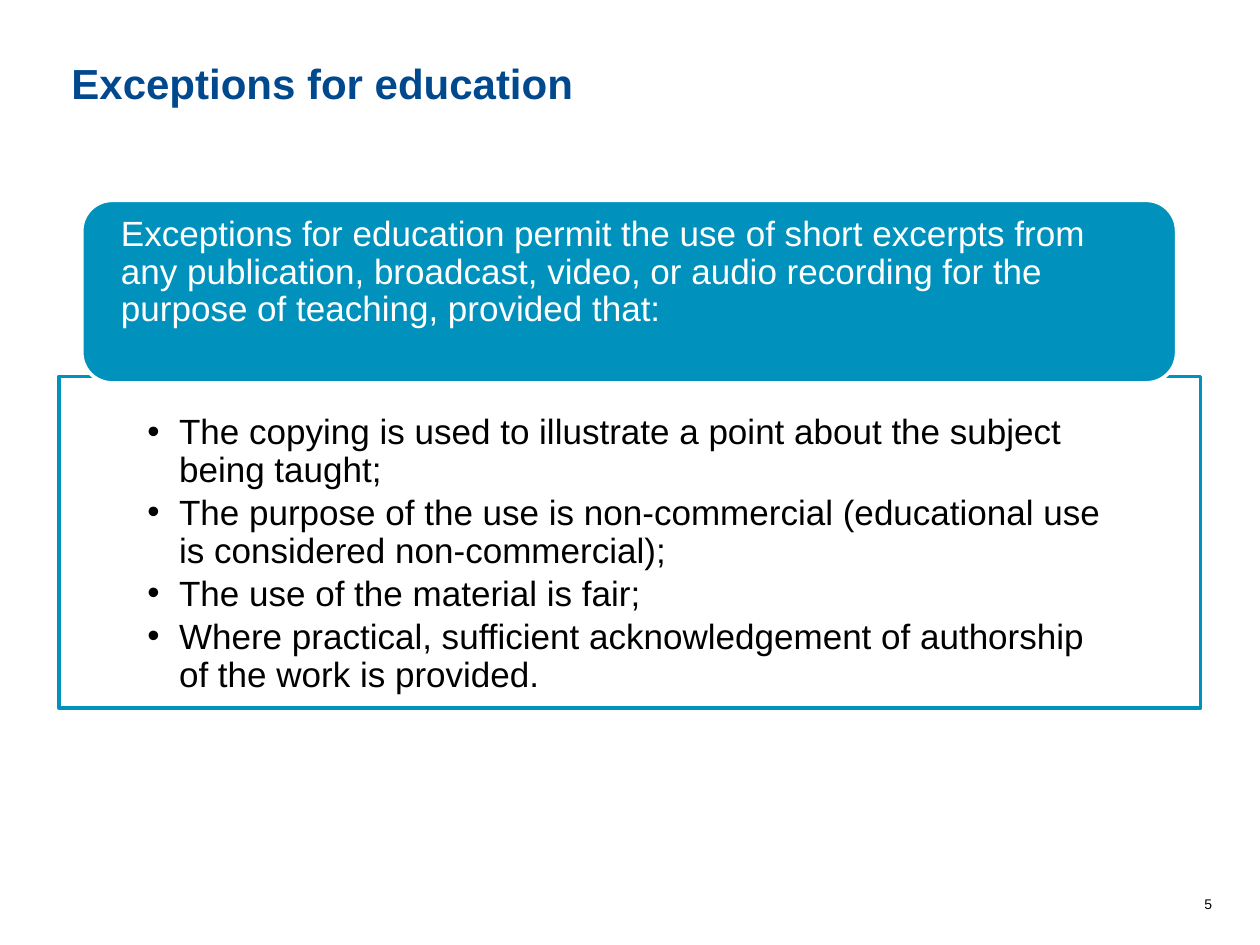
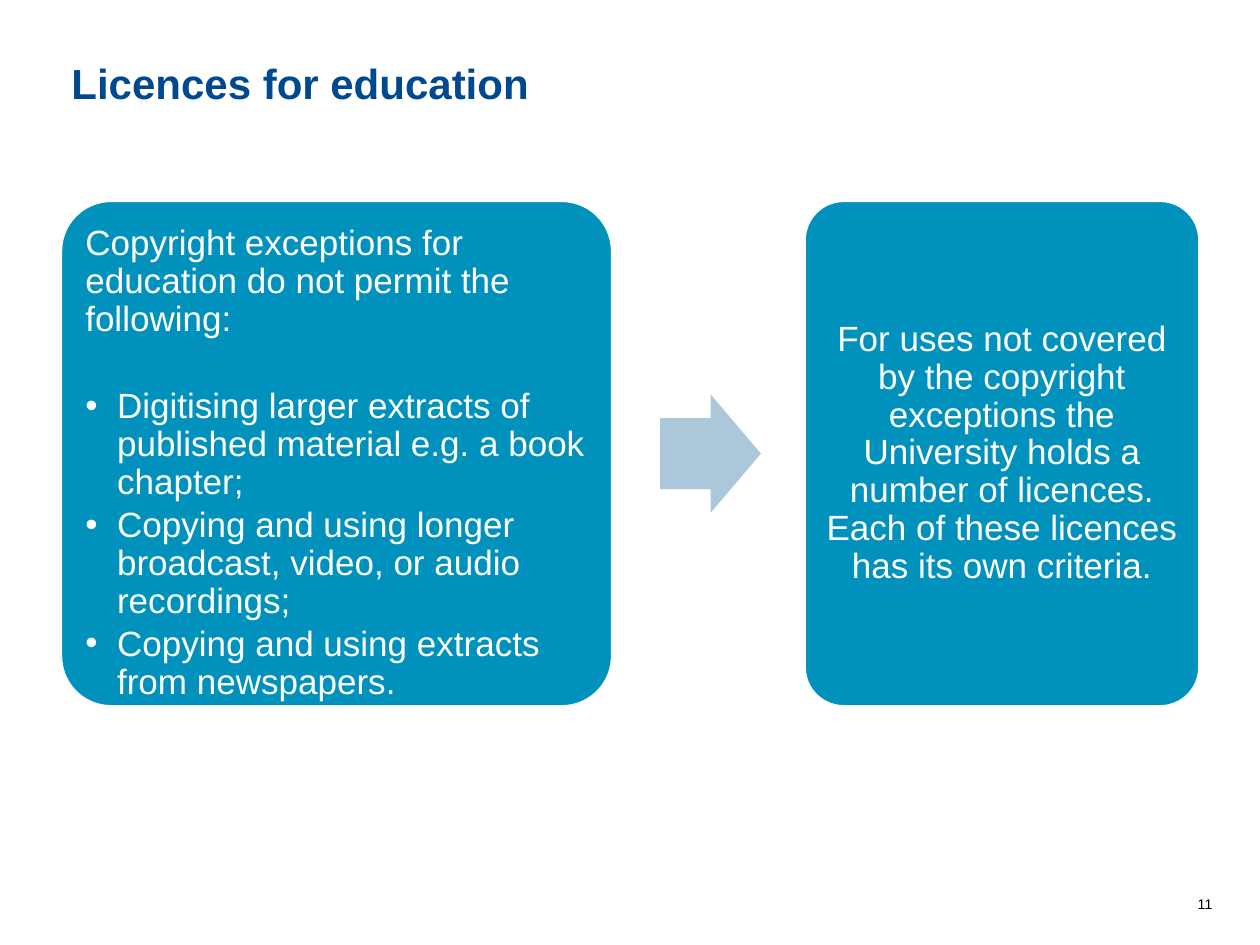
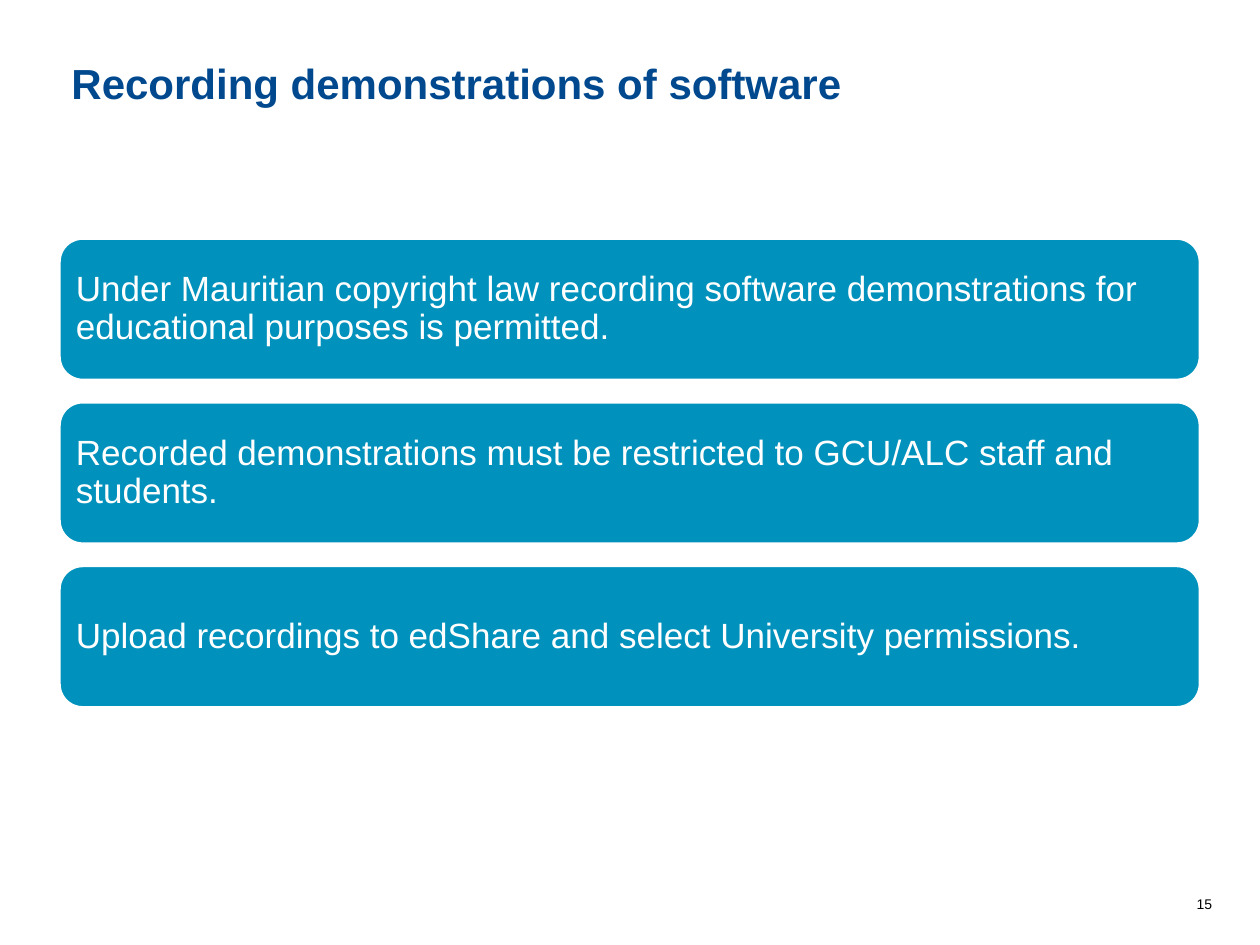
from dataclasses import dataclass

from pptx import Presentation
from pptx.dml.color import RGBColor as Rgb
from pptx.enum.shapes import MSO_SHAPE as Form
from pptx.enum.text import MSO_ANCHOR as Anchor, MSO_AUTO_SIZE as Fit, PP_ALIGN as Align
from pptx.oxml.ns import qn
from pptx.util import Cm, Pt
from lxml.etree import SubElement


@dataclass(frozen=True)
class Theme:
    font: str = "Arial"
    navy: Rgb = Rgb(0x01, 0x49, 0x8E)
    teal: Rgb = Rgb(0x00, 0x92, 0xBC)
    pale: Rgb = Rgb(0xAB, 0xC7, 0xDA)
    white: Rgb = Rgb(0xFF, 0xFF, 0xFF)
    black: Rgb = Rgb(0x00, 0x00, 0x00)
    head: Pt = Pt(24)
    text: Pt = Pt(20)
    note: Pt = Pt(8)
    edge: Pt = Pt(2)


theme = Theme()
left, top, wide = 1.19, 4.04, 23.01  # content area, in cm
pad = (0.2, 0.2, 0.2, 0.2)


def write(shape, lines, color, size=theme.text, bold=False, align=Align.LEFT,
          anchor=Anchor.TOP, inset=(0.25, 0.13, 0.25, 0.13), space=0.9, bullets=None):
    """Fill a shape with text; lines from index bullets onwards become a list."""
    frame = shape.text_frame
    frame.text = "\n".join(lines)
    frame.word_wrap, frame.auto_size = True, Fit.NONE
    frame.vertical_anchor = anchor
    (frame.margin_left, frame.margin_top,
     frame.margin_right, frame.margin_bottom) = map(Cm, inset)
    for i, para in enumerate(frame.paragraphs):
        props = para._p.get_or_add_pPr()
        if bullets is not None and i >= bullets:
            props.set("marL", str(Cm(0.64)))
            props.set("indent", str(-Cm(0.64)))
            SubElement(props, qn("a:buFont"), typeface=theme.font)
            SubElement(props, qn("a:buChar"), char="•")
            para.space_after = Pt(3)
        else:
            props.set("marL", "0")
            props.set("indent", "0")
            SubElement(props, qn("a:buNone"))
            para.space_after = Pt(0)
        para.alignment, para.line_spacing, para.space_before = align, space, Pt(0)
        for run in para.runs:
            font = run.font
            font.name, font.size, font.bold = theme.font, size, bold
            font.color.rgb = color


def draw(slide, form, box, fill, line=None, round=None):
    shape = slide.shapes.add_shape(form, *map(Cm, box))
    shape.shadow.inherit = False
    shape.fill.solid()
    shape.fill.fore_color.rgb = fill
    if line is None:
        shape.line.fill.background()
    else:
        shape.line.color.rgb, shape.line.width = line, theme.edge
    if round is not None:
        shape.adjustments[0] = round
    return shape


deck = Presentation()
deck.slide_width, deck.slide_height = Cm(25.4), Cm(19.05)

# Titles and page numbers
slides = []
for title, page, layout in [
    ("Exceptions for education", "5", 1),
    ("Licences for education", "11", 1),
    ("Recording demonstrations of software", "15", 5),
]:
    slide = deck.slides.add_slide(deck.slide_layouts[layout])
    head = slide.shapes.title
    head.left, head.top, head.width, head.height = map(Cm, (left, 1.02, wide, 1.27))
    write(head, [title], theme.navy, theme.head, bold=True, space=1.0)
    foot = slide.shapes.add_textbox(Cm(13.69), Cm(17.93), Cm(11), Cm(0.6))
    write(foot, [page], theme.black, theme.note, align=Align.RIGHT, space=1.0)
    slides.append(slide)
rules, rights, demos = slides

# Exceptions: framed list under a banner
body = rules.placeholders[1]
body.left, body.top, body.width, body.height = map(Cm, (left, 7.59, wide, 6.68))
body.fill.solid()
body.fill.fore_color.rgb = theme.white
body.line.color.rgb, body.line.width = theme.teal, theme.edge
write(body, [
    "The copying is used to illustrate a point about the subject being taught;",
    "The purpose of the use is non-commercial (educational use is considered non-commercial);",
    "The use of the material is fair;",
    "Where practical, sufficient acknowledgement of authorship of the work is provided.",
], theme.black, inset=(1.78, 0.76, 1.78, 0.41), bullets=0)
banner = draw(rules, Form.ROUNDED_RECTANGLE, (1.65, top, 22.07, 3.68),
              theme.teal, theme.white)
write(banner, [
    "Exceptions for education permit the use of short excerpts from any publication, "
    "broadcast, video, or audio recording for the purpose of teaching, provided that:",
], theme.white, anchor=Anchor.MIDDLE, inset=(0.61, 0, 0.61, 0.76))

# Licences: what is not permitted leads to the licences held
card = draw(rights, Form.ROUNDED_RECTANGLE, (1.22, top, 11.13, 10.21),
            theme.teal, theme.white, 0.1)
body = rights.placeholders[1]
body.left, body.top, body.width, body.height = map(Cm, (1.52, 4.34, 10.54, 9.63))
card._element.addnext(body._element)
write(body, [
    "Copyright exceptions for education do not permit the following:",
    "Digitising larger extracts of published material e.g. a book chapter;",
    "Copying and using longer broadcast, video, or audio recordings;",
    "Copying and using extracts from newspapers.",
], theme.white, inset=pad, bullets=1)
body.text_frame.paragraphs[0].space_after = Pt(28.6)
draw(rights, Form.RIGHT_ARROW, (13.31, 7.95, 2.03, 2.39), theme.pale, round=0.6)
card = draw(rights, Form.ROUNDED_RECTANGLE, (16.21, top, 7.98, 10.21),
            theme.teal, theme.white, 0.1)
write(card, [
    "For uses not covered by the copyright exceptions the University holds a number "
    "of licences. Each of these licences has its own criteria.",
], theme.white, align=Align.CENTER, anchor=Anchor.MIDDLE, inset=pad)

# Software demonstrations: three stacked bars
for i, text in enumerate([
    "Under Mauritian copyright law recording software demonstrations for educational "
    "purposes is permitted.",
    "Recorded demonstrations must be restricted to GCU/ALC staff and students.",
    "Upload recordings to edShare and select University permissions.",
]):
    bar = draw(demos, Form.ROUNDED_RECTANGLE, (left, 4.8 + 3.3 * i, wide, 2.87),
               theme.teal, theme.white)
    write(bar, [text], theme.white, anchor=Anchor.MIDDLE, inset=pad)

deck.save("out.pptx")
